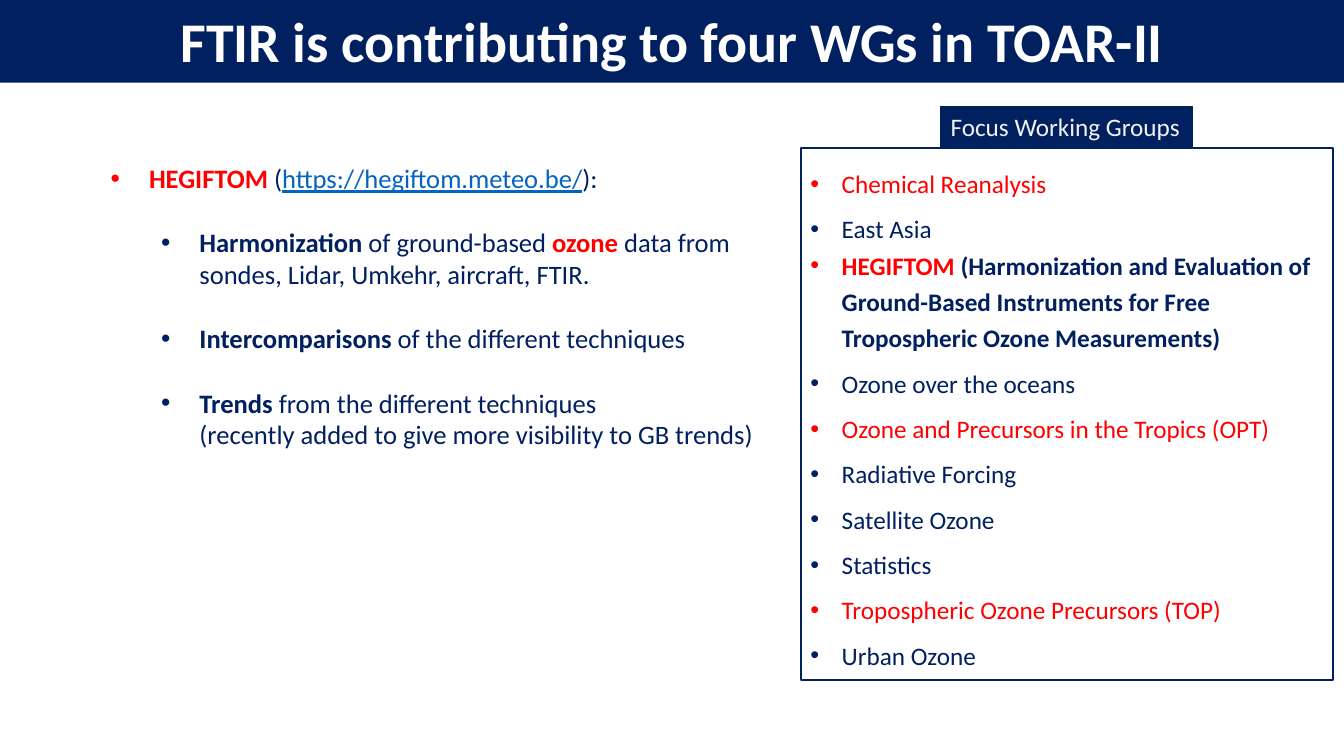
from pptx import Presentation, util as u
from pptx.dml.color import RGBColor
from pptx.enum import shapes, text
from pptx.oxml.ns import qn
from lxml import etree

NAVY = RGBColor(0x00, 0x20, 0x60)
RED = RGBColor(0xFF, 0x00, 0x00)
BLUE = RGBColor(0x05, 0x63, 0xC1)
WHITE = RGBColor(0xFF, 0xFF, 0xFF)
PALE = RGBColor(0xF2, 0xF2, 0xF2)


def add_run(p, content, size=18, color=NAVY, bold=False, underline=False):
    r = p.add_run()
    r.text = content
    r.font.name = "Calibri"
    r.font.size = u.Pt(size)
    r.font.color.rgb = color
    r.font.bold = bold
    if underline:
        r.font.underline = True


class SlideBuilder:
    def __init__(self, prs):
        self.s = prs.slides.add_slide(prs.slide_layouts[6])

    def box(self, x, y, w, h, fill, line=None, wrap=True,
            anchor=text.MSO_ANCHOR.TOP):
        sp = self.s.shapes.add_shape(
            shapes.MSO_SHAPE.RECTANGLE,
            u.Inches(x), u.Inches(y), u.Inches(w), u.Inches(h))
        sp.shadow.inherit = False
        sp.fill.solid()
        sp.fill.fore_color.rgb = fill
        if line:
            sp.line.color.rgb = NAVY
            sp.line.width = u.Pt(line)
        else:
            sp.line.fill.background()
        tf = sp.text_frame
        tf.word_wrap = wrap
        tf.vertical_anchor = anchor
        return tf

    def textbox(self, x, y, w, h, top):
        sp = self.s.shapes.add_textbox(
            u.Inches(x), u.Inches(y), u.Inches(w), u.Inches(h))
        tf = sp.text_frame
        tf.word_wrap = True
        tf.margin_top = u.Inches(top)
        return tf

    def paragraph(self, tf, runs, size=18, align=text.PP_ALIGN.LEFT,
                  left=0, hang=0, before=0, spacing=1.0):
        p = tf.paragraphs[0]
        if p.runs:
            p = tf.add_paragraph()
        p.alignment = align
        p.line_spacing = spacing
        p.space_before = u.Pt(before)
        pPr = p._p.get_or_add_pPr()
        pPr.set("marL", str(u.Inches(left)))
        pPr.set("indent", str(-u.Inches(hang)))
        if hang:
            font = etree.SubElement(pPr, qn("a:buFont"))
            font.set("typeface", "Arial")
            etree.SubElement(pPr, qn("a:buChar")).set("char", "•")
        for content, style in runs:
            add_run(p, content, size=size, **style)


def main():
    prs = Presentation()
    prs.slide_width = u.Inches(13.33)
    prs.slide_height = u.Inches(7.5)
    b = SlideBuilder(prs)
    bold, red = {"bold": True}, {"color": RED}
    bold_red = {**bold, **red}

    title = b.box(0, -0.03, 13.33, 0.85, NAVY, anchor=text.MSO_ANCHOR.MIDDLE)
    b.paragraph(title, [("FTIR is contributing to four WGs in TOAR-II",
                         {"color": WHITE, **bold})],
                size=40, align=text.PP_ALIGN.CENTER)

    label = b.box(9.33, 1.06, 2.5, 0.4, NAVY, line=0.75, wrap=False)
    b.paragraph(label, [("Focus Working Groups", {"color": PALE})])

    groups = [
        (1.5, [("Chemical Reanalysis", red)]),
        (1.5, [("East Asia", {})]),
        (1.2, [("HEGIFTOM ", bold_red),
               ("(Harmonization and Evaluation of Ground-Based Instruments "
                "for Free Tropospheric Ozone Measurements)", bold)]),
        (1.5, [("Ozone over the oceans", {})]),
        (1.5, [("Ozone and Precursors in the Tropics (OPT)", red)]),
        (1.5, [("Radiative Forcing", {})]),
        (1.5, [("Satellite Ozone", {})]),
        (1.5, [("Statistics", {})]),
        (1.5, [("Tropospheric Ozone Precursors (TOP)", red)]),
        (1.5, [("Urban Ozone", {})]),
    ]
    panel = b.box(7.94, 1.47, 5.28, 5.28, WHITE, line=1.5)
    for spacing, runs in groups:
        b.paragraph(panel, runs, left=0.31, hang=0.31, spacing=spacing)

    goals = [
        [("Harmonization", bold), (" of ground-based ", {}),
         ("ozone ", bold_red),
         ("data from sondes, Lidar, Umkehr, aircraft, FTIR.", {})],
        [("Intercomparisons", bold), (" of the different techniques", {})],
        [("Trends ", bold), ("from the different techniques", {})],
    ]
    body = b.textbox(0, 1.26, 7.74, 3.58, top=0.35)
    b.paragraph(body, [("HEGIFTOM ", bold_red), ("(", {}),
                       ("https://hegiftom.meteo.be/",
                        {"color": BLUE, "underline": True}), ("):", {})],
                size=19, left=1.38, hang=0.38)
    for runs in goals:
        b.paragraph(body, runs, size=19, left=1.88, hang=0.38, before=23)
    b.paragraph(body, [("(recently added to give more visibility to GB trends)",
                        {})], size=19, left=1.88)

    prs.save("out.pptx")


if __name__ == "__main__":
    main()
